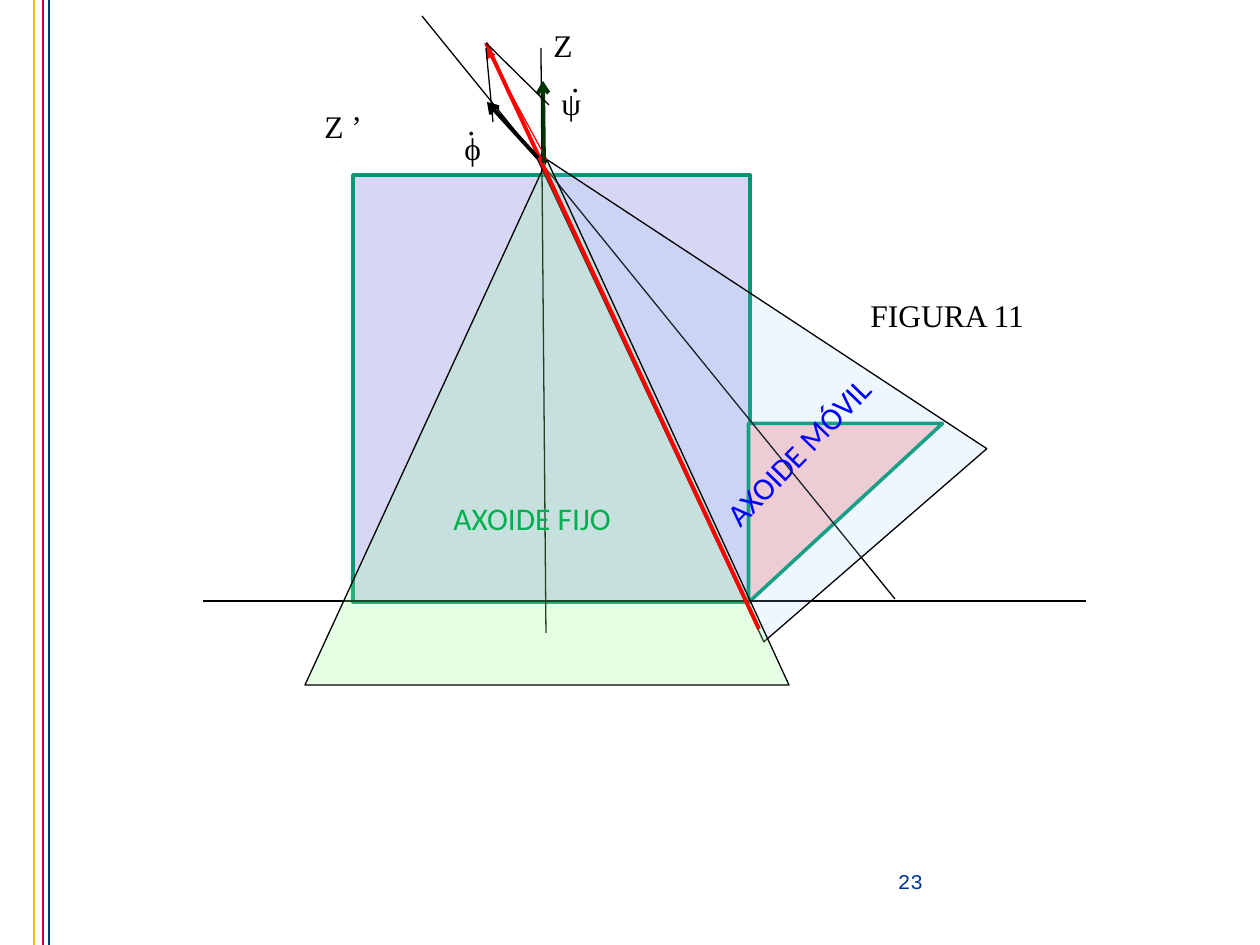
from lxml import etree
from pptx import Presentation
from pptx.dml.color import RGBColor
from pptx.enum.shapes import MSO_CONNECTOR, MSO_SHAPE
from pptx.enum.text import MSO_AUTO_SIZE, PP_ALIGN
from pptx.oxml.ns import qn
from pptx.util import Emu, Pt

STRAIGHT = MSO_CONNECTOR.STRAIGHT
RECTANGLE = MSO_SHAPE.RECTANGLE
TRIANGLE = MSO_SHAPE.ISOSCELES_TRIANGLE
RIGHT_TRIANGLE = MSO_SHAPE.RIGHT_TRIANGLE
LEFT, CENTER = PP_ALIGN.LEFT, PP_ALIGN.CENTER
FIT_SHAPE = MSO_AUTO_SIZE.SHAPE_TO_FIT_TEXT

PX_PER_INCH = 126
WIDTH, HEIGHT = 1260, 945
BLANK_LAYOUT = 6


def px(value):
    return Emu(round(value * 914400 / PX_PER_INCH))


def color(hex_string):
    return RGBColor.from_string(hex_string)


def add_text(slide, text, box, font="Times New Roman", size=18,
             text_color="000000", align=LEFT, rotation=0):
    shape = slide.shapes.add_textbox(*map(px, box))
    shape.rotation = rotation
    frame = shape.text_frame
    frame.word_wrap = True
    frame.auto_size = FIT_SHAPE
    paragraph = frame.paragraphs[0]
    paragraph.text = text
    paragraph.alignment = align
    paragraph.font.name = font
    paragraph.font.size = Pt(size)
    paragraph.font.color.rgb = color(text_color)


def add_line(slide, start, end, line_color="000000", width=0.75, arrow=None):
    connector = slide.shapes.add_connector(STRAIGHT, *map(px, start + end))
    connector.line.color.rgb = color(line_color)
    connector.line.width = Pt(width)
    if arrow:
        line = connector.line._get_or_add_ln()
        etree.SubElement(line, qn("a:tailEnd"), type=arrow)
    etree.SubElement(connector._element.spPr, qn("a:effectLst"))


def add_figure(slide, kind, box, fill, line_color="000000", width=0.75,
               rotation=0, opacity=100):
    shape = slide.shapes.add_shape(kind, *map(px, box))
    shape.rotation = rotation
    shape.shadow.inherit = False
    shape.fill.solid()
    shape.fill.fore_color.rgb = color(fill)
    if opacity < 100:
        fill_color = shape._element.spPr.find(qn("a:solidFill"))[0]
        etree.SubElement(fill_color, qn("a:alpha"), val=str(opacity * 1000))
    shape.line.color.rgb = color(line_color)
    shape.line.width = Pt(width)


def add_page_frame(slide):
    add_text(slide, "23", (874, 862, 73, 34), font="Courier New", size=12,
             text_color="003399", align=CENTER)
    for x, stripe_color in ((34, "EBBD00"), (43, "C1003D"), (49, "003F6D")):
        add_line(slide, (x, 0), (x, HEIGHT), stripe_color, 1.5)


def add_bodies_and_axes(slide):
    add_figure(slide, RECTANGLE, (353, 175, 397, 427), "D6D6F5", "009771", 2)
    add_line(slide, (541, 48), (546, 633))  # Z axis
    add_figure(slide, RIGHT_TRIANGLE, (756, 416, 179, 194), "FFCCCC",
               "009771", 2, rotation=90)
    add_line(slide, (203, 601), (1086, 601))  # ground
    add_line(slide, (422, 16), (895, 599))  # Z' axis


def add_axodes(slide):
    # Moving cone, fixed cone and their common line
    add_figure(slide, TRIANGLE, (557, 87, 295, 522), "99CCFF",
               rotation=319.1, opacity=16)
    add_figure(slide, TRIANGLE, (305, 160, 484, 525), "99FF99", opacity=25)
    add_line(slide, (486, 43), (759, 629), "FF0000", 2.25)


def add_velocity_vectors(slide):
    add_line(slide, (547, 160), (486, 48), "FF0000", arrow="triangle")
    add_line(slide, (544, 163), (543, 81), "003300", 2.25, arrow="arrow")
    add_line(slide, (538, 158), (487, 102), width=2.25, arrow="arrow")
    # Sides of the parallelogram
    add_line(slide, (486, 48), (493, 122))
    add_line(slide, (486, 43), (549, 105))


def add_labels(slide):
    labels = (
        ("Z", 541, 20, 129), ("Z ’", 312, 101, 129),
        ("FIGURA 11", 858, 290, 238),
        ("ψ", 549, 78, 69), ("ϕ", 452, 123, 69),
        (".", 559, 55, 78), (".", 455, 98, 78),
    )
    for text, left, top, width in labels:
        add_text(slide, text, (left, top, width, 50))
    add_text(slide, "AXOIDE FIJO", (441, 493, 228, 50), font="Calibri",
             text_color="00B050")
    add_text(slide, "AXOIDE MÓVIL", (688, 422, 228, 50), font="Calibri",
             text_color="0000FF", rotation=314.1)


def main():
    presentation = Presentation()
    presentation.slide_width = px(WIDTH)
    presentation.slide_height = px(HEIGHT)
    layout = presentation.slide_layouts[BLANK_LAYOUT]
    slide = presentation.slides.add_slide(layout)
    add_page_frame(slide)
    add_bodies_and_axes(slide)
    add_axodes(slide)
    add_velocity_vectors(slide)
    add_labels(slide)
    presentation.save("out.pptx")


if __name__ == "__main__":
    main()
